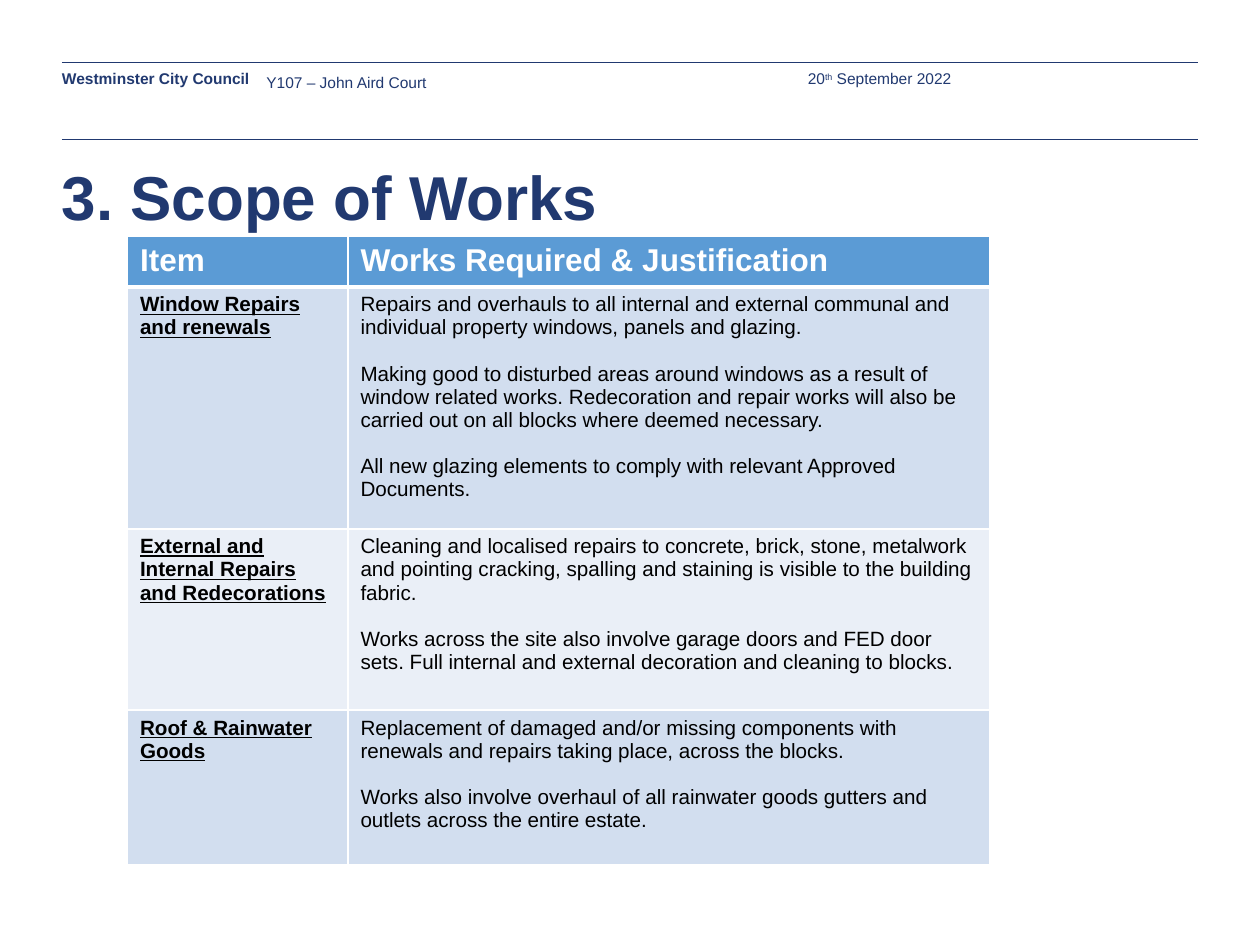
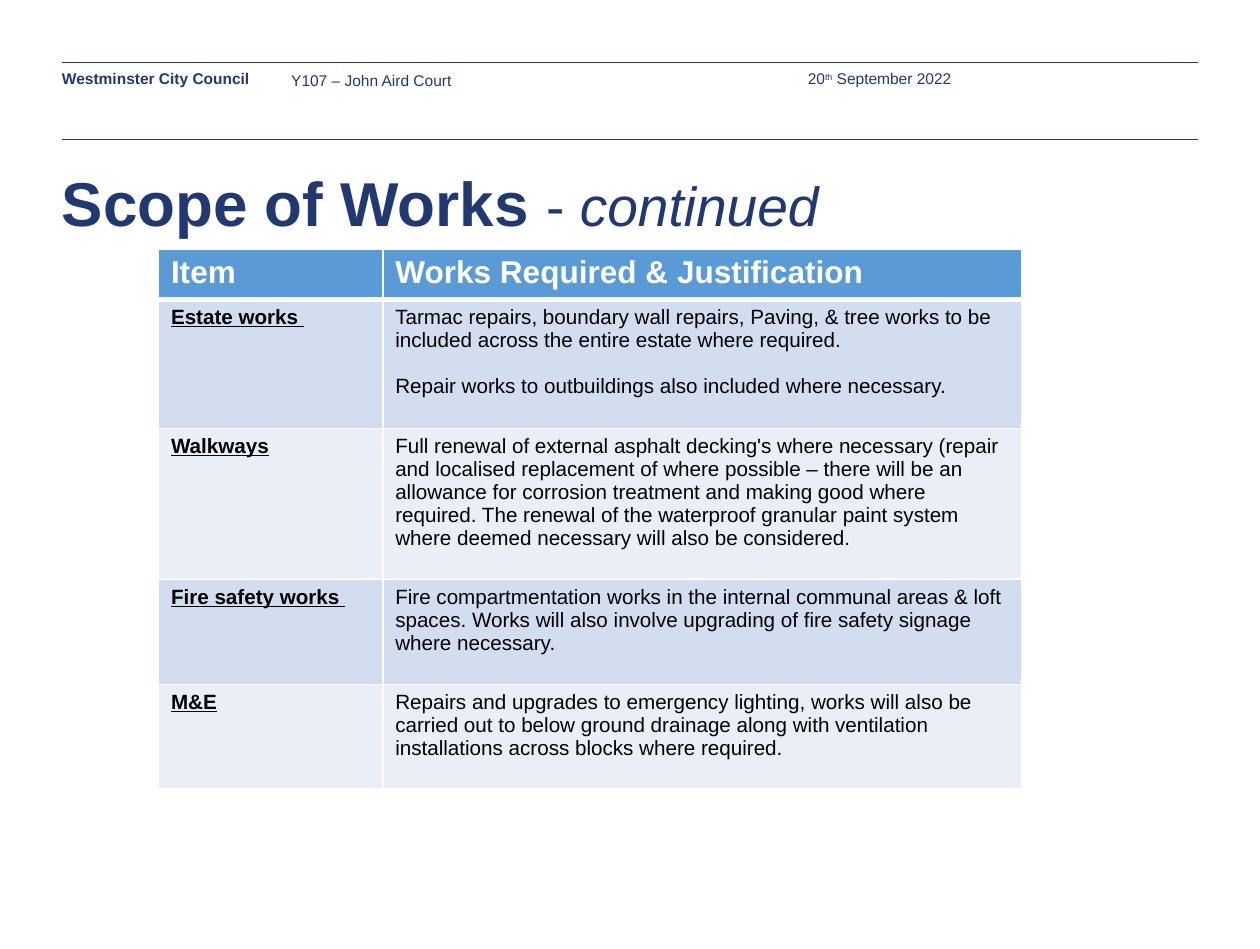
from lxml.etree import SubElement
from pptx import Presentation
from pptx.dml.color import RGBColor
from pptx.enum.shapes import MSO_CONNECTOR as CONNECTOR
from pptx.enum.text import MSO_ANCHOR as ANCHOR
from pptx.oxml.ns import qn
from pptx.util import Inches, Pt

COLOURS = {
    "navy": "213970",
    "header": "5B9BD5",
    "band_dark": "D2DEEF",
    "band_light": "EAEFF7",
    "white": "FFFFFF",
    "black": "000000",
}
FORMATS = {
    "title": {"size": Pt(36), "bold": True},
    "title_dash": {"size": Pt(32), "bold": False},
    "title_note": {"size": Pt(32), "bold": False, "italic": True},
    "strip": {"size": Pt(9), "bold": False},
    "strip_bold": {"size": Pt(9), "bold": True},
    "heading": {"size": Pt(18.3), "bold": True},
    "item": {"size": Pt(12), "bold": True, "underline": True},
    "body": {"size": Pt(12), "bold": False},
}
HEADINGS = ["Item", "Works Required & Justification"]

presentation = Presentation()
presentation.slide_width = Inches(10.17)
presentation.slide_height = Inches(7.66)

# One grid step is a hundredth of the slide's width or height
COLUMN = presentation.slide_width / 100
ROW = presentation.slide_height / 100
LEFT, RIGHT = 4.92, 95.08
HEADER_ROW = 5.1

SLIDES = [
    {
        "title": [("3. Scope of Works", "title")],
        "title_top": 16.71,
        "project_at": (21.14, 7.44),
        "table_at": (10.13, 24.93),
        "columns": [17.5, 50.93],
        "rows": [25.5, 19.1, 16.3],
        "works": [
            ("Window Repairs and renewals", [
                "Repairs and overhauls to all internal and external communal and "
                "individual property windows, panels and glazing.",
                "Making good to disturbed areas around windows as a result of window "
                "related works. Redecoration and repair works will also be carried out "
                "on all blocks where deemed necessary.",
                "All new glazing elements to comply with relevant Approved Documents.",
            ]),
            ("External and Internal Repairs and Redecorations", [
                "Cleaning and localised repairs to concrete, brick, stone, metalwork and "
                "pointing cracking, spalling and staining is visible to the building "
                "fabric.",
                "Works across the site also involve garage doors and FED door sets. Full "
                "internal and external decoration and cleaning to blocks.",
            ]),
            ("Roof & Rainwater Goods", [
                "Replacement of damaged and/or missing components with renewals and "
                "repairs taking place, across the blocks.",
                "Works also involve overhaul of all rainwater goods gutters and outlets "
                "across the entire estate.",
            ]),
        ],
    },
    {
        "title": [("Scope of Works ", "title"), ("- ", "title_dash"),
                  ("continued", "title_note")],
        "title_top": 17.36,
        "project_at": (23.11, 7.31),
        "table_at": (12.59, 26.24),
        "columns": [17.8, 50.74],
        "rows": [13.6, 15.9, 11.1, 11],
        "works": [
            ("Estate works ", [
                "Tarmac repairs, boundary wall repairs, Paving, & tree works to be "
                "included across the entire estate where required.",
                "Repair works to outbuildings also included where necessary.",
            ]),
            ("Walkways", [
                "Full renewal of external asphalt decking's where necessary (repair and "
                "localised replacement of where possible – there will be an allowance "
                "for corrosion treatment and making good where required. The renewal of "
                "the waterproof granular paint system where deemed necessary will also "
                "be considered.",
            ]),
            ("Fire safety works ", [
                "Fire compartmentation works in the internal communal areas & loft "
                "spaces. Works will also involve upgrading of fire safety signage where "
                "necessary.",
            ]),
            ("M&E", [
                "Repairs and upgrades to emergency lighting, works will also be carried "
                "out to below ground drainage along with ventilation installations "
                "across blocks where required.",
            ]),
        ],
    },
]


def add_run(paragraph, text, style, colour):
    run = paragraph.add_run()
    run.text = text
    run.font.name = "Arial"
    run.font.color.rgb = RGBColor.from_string(COLOURS[colour])
    for name, value in FORMATS[style].items():
        setattr(run.font, name, value)
    return run


def add_text(slide, left, top, width, height, runs):
    shape = slide.shapes.add_textbox(
        round(left * COLUMN), round(top * ROW), round(width * COLUMN), round(height * ROW))
    frame = shape.text_frame
    frame.word_wrap = True
    for side in ("left", "top", "right", "bottom"):
        setattr(frame, f"margin_{side}", 0)
    for text, style in runs:
        add_run(frame.paragraphs[0], text, style, "navy")
    return frame


for content in SLIDES:
    slide = presentation.slides.add_slide(presentation.slide_layouts[6])

    # Header strip between two rules
    for level in (6.53, 14.62):
        rule = slide.shapes.add_connector(
            CONNECTOR.STRAIGHT, round(LEFT * COLUMN), round(level * ROW),
            round(RIGHT * COLUMN), round(level * ROW))
        rule.line.width = Pt(0.25)
        rule.line.color.rgb = RGBColor.from_string(COLOURS["navy"])
        SubElement(rule._element.spPr, qn("a:effectLst"))
    council = add_text(slide, LEFT, 7.31, 15.04, 1.96,
                       [("Westminster City Council", "strip_bold")])
    council.word_wrap = False
    project = add_text(slide, *content["project_at"], 35.1, 5.35,
                       [("Y107 – John Aird Court", "strip")])
    project.paragraphs[0].line_spacing = Pt(12)
    date = add_text(slide, 64.11, 7.31, 22.52, 1.96,
                    [("20", "strip"), ("th", "strip"), (" September 2022", "strip")])
    date.vertical_anchor = ANCHOR.MIDDLE
    date.paragraphs[0].runs[1]._r.get_or_add_rPr().set("baseline", "30000")

    # Title
    add_text(slide, LEFT, content["title_top"], RIGHT - LEFT, 10.7, content["title"])

    # Table of works
    left, top = content["table_at"]
    heights = [HEADER_ROW, *content["rows"]]
    table = slide.shapes.add_table(
        len(heights), len(HEADINGS), round(left * COLUMN), round(top * ROW),
        round(sum(content["columns"]) * COLUMN), round(sum(heights) * ROW)).table
    for column, width in zip(table.columns, content["columns"]):
        column.width = round(width * COLUMN)
    for row, height in zip(table.rows, heights):
        row.height = round(height * ROW)

    records = [(HEADINGS[0], [HEADINGS[1]]), *content["works"]]
    for row_index, (item, details) in enumerate(records):
        is_header = row_index == 0
        fill = "header" if is_header else ("band_light", "band_dark")[row_index % 2]
        colour = "white" if is_header else "black"
        styles = ("heading", "heading") if is_header else ("item", "body")
        borders = {"lnL": 1, "lnR": 1, "lnT": 3 if row_index == 1 else 1,
                   "lnB": 3 if is_header else 1}
        for column_index, paragraphs in enumerate(([item], details)):
            cell = table.cell(row_index, column_index)
            properties = cell._tc.get_or_add_tcPr()
            for tag, weight in borders.items():
                border = SubElement(properties, qn(f"a:{tag}"), w=str(Pt(weight)))
                solid = SubElement(border, qn("a:solidFill"))
                SubElement(solid, qn("a:srgbClr"), val=COLOURS["white"])
            cell.fill.solid()
            cell.fill.fore_color.rgb = RGBColor.from_string(COLOURS[fill])
            for index, text in enumerate(paragraphs):
                frame = cell.text_frame
                paragraph = frame.add_paragraph() if index else frame.paragraphs[0]
                if index:
                    paragraph.space_before = Pt(13.5)
                add_run(paragraph, text, styles[column_index], colour)

presentation.save("out.pptx")
